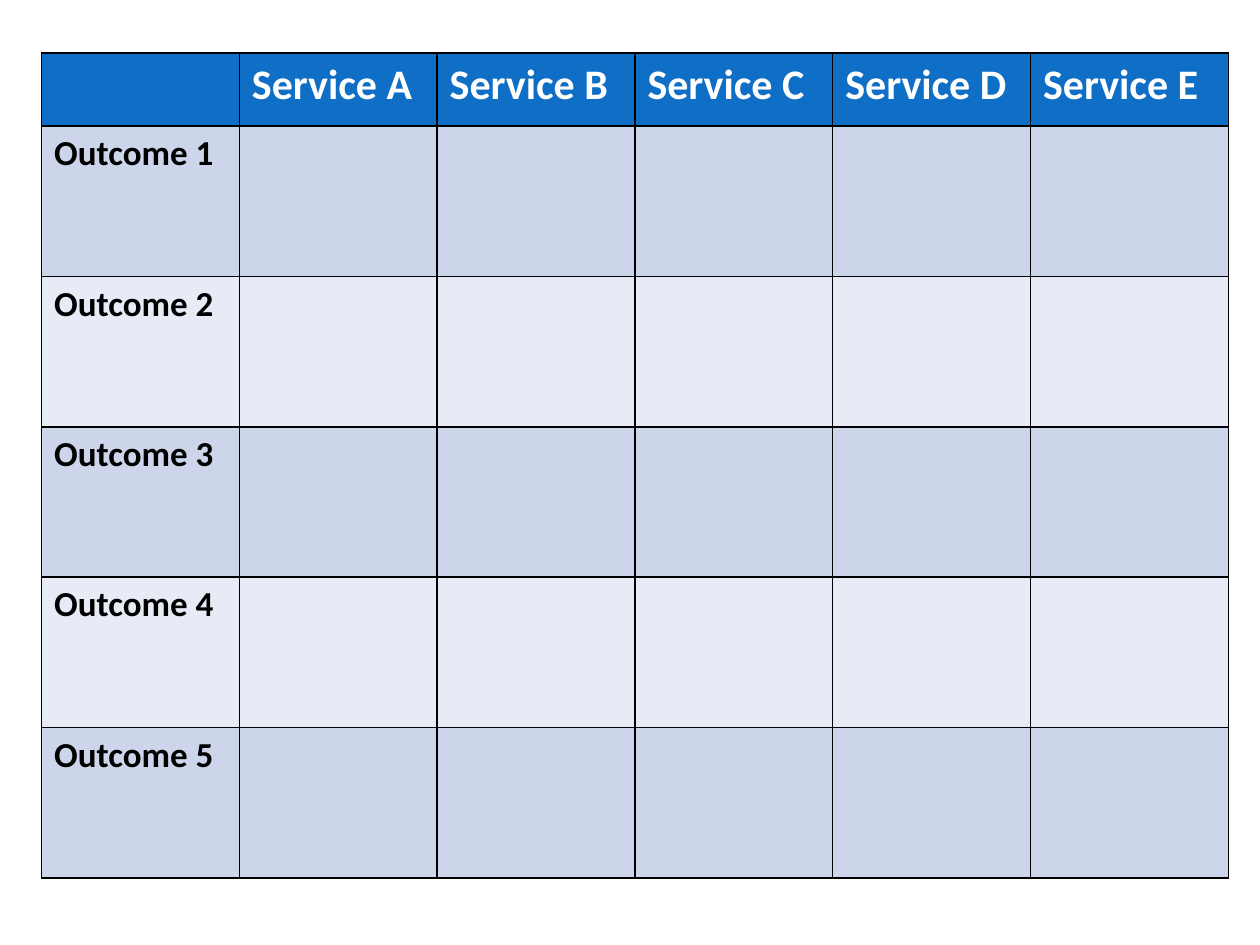
from dataclasses import dataclass

from lxml.etree import SubElement
from pptx import Presentation
from pptx.dml.color import RGBColor
from pptx.oxml.ns import qn
from pptx.util import Inches, Pt

SERVICES = ["Service A", "Service B", "Service C", "Service D", "Service E"]
OUTCOMES = ["Outcome 1", "Outcome 2", "Outcome 3", "Outcome 4", "Outcome 5"]


@dataclass(frozen=True)
class Theme:
    font: str = "Calibri"
    header_fill: str = "0F6FC6"
    header_text: str = "FFFFFF"
    header_size: int = 24
    bands: tuple = ("CCD5EA", "E7EBF5")
    label_text: str = "000000"
    label_size: int = 20
    border: str = "000000"
    border_width: int = 1


THEME = Theme()
LEFT, TOP, WIDTH, HEIGHT = 0.33, 0.42, 9.42, 6.55
HEADER_HEIGHT = 0.58


def write_text(cell, text, *, size, color, bold=True):
    paragraph = cell.text_frame.paragraphs[0]
    paragraph.font.size = Pt(size)
    if text:
        span = paragraph.add_run()
        span.text = text
        span.font.name = THEME.font
        span.font.size = Pt(size)
        span.font.bold = bold
        span.font.color.rgb = RGBColor.from_string(color)


def add_borders(cell):
    properties = cell._tc.get_or_add_tcPr()
    for position, side in enumerate(("lnL", "lnR", "lnT", "lnB")):
        line = properties.makeelement(qn(f"a:{side}"), {"w": str(Pt(THEME.border_width))})
        fill = SubElement(line, qn("a:solidFill"))
        SubElement(fill, qn("a:srgbClr"), val=THEME.border)
        properties.insert(position, line)


def format_cell(cell, text, *, fill, size, color):
    cell.fill.solid()
    cell.fill.fore_color.rgb = RGBColor.from_string(fill)
    write_text(cell, text, size=size, color=color)
    add_borders(cell)


def add_matrix(page):
    rows = [["", *SERVICES]] + [[outcome] + [""] * len(SERVICES) for outcome in OUTCOMES]
    table = page.shapes.add_table(
        len(rows), len(rows[0]), Inches(LEFT), Inches(TOP), Inches(WIDTH), Inches(HEIGHT)
    ).table
    for column in table.columns:
        column.width = Inches(WIDTH / len(rows[0]))
    for number, texts in enumerate(rows):
        if number == 0:
            height = HEADER_HEIGHT
            style = dict(fill=THEME.header_fill, size=THEME.header_size, color=THEME.header_text)
        else:
            height = (HEIGHT - HEADER_HEIGHT) / len(OUTCOMES)
            band = THEME.bands[(number - 1) % len(THEME.bands)]
            style = dict(fill=band, size=THEME.label_size, color=THEME.label_text)
        table.rows[number].height = Inches(height)
        for index, text in enumerate(texts):
            format_cell(table.cell(number, index), text, **style)


def main():
    deck = Presentation()
    deck.slide_width, deck.slide_height = Inches(10), Inches(7.5)
    page = deck.slides.add_slide(deck.slide_layouts[6])
    add_matrix(page)
    deck.save("out.pptx")


if __name__ == "__main__":
    main()
